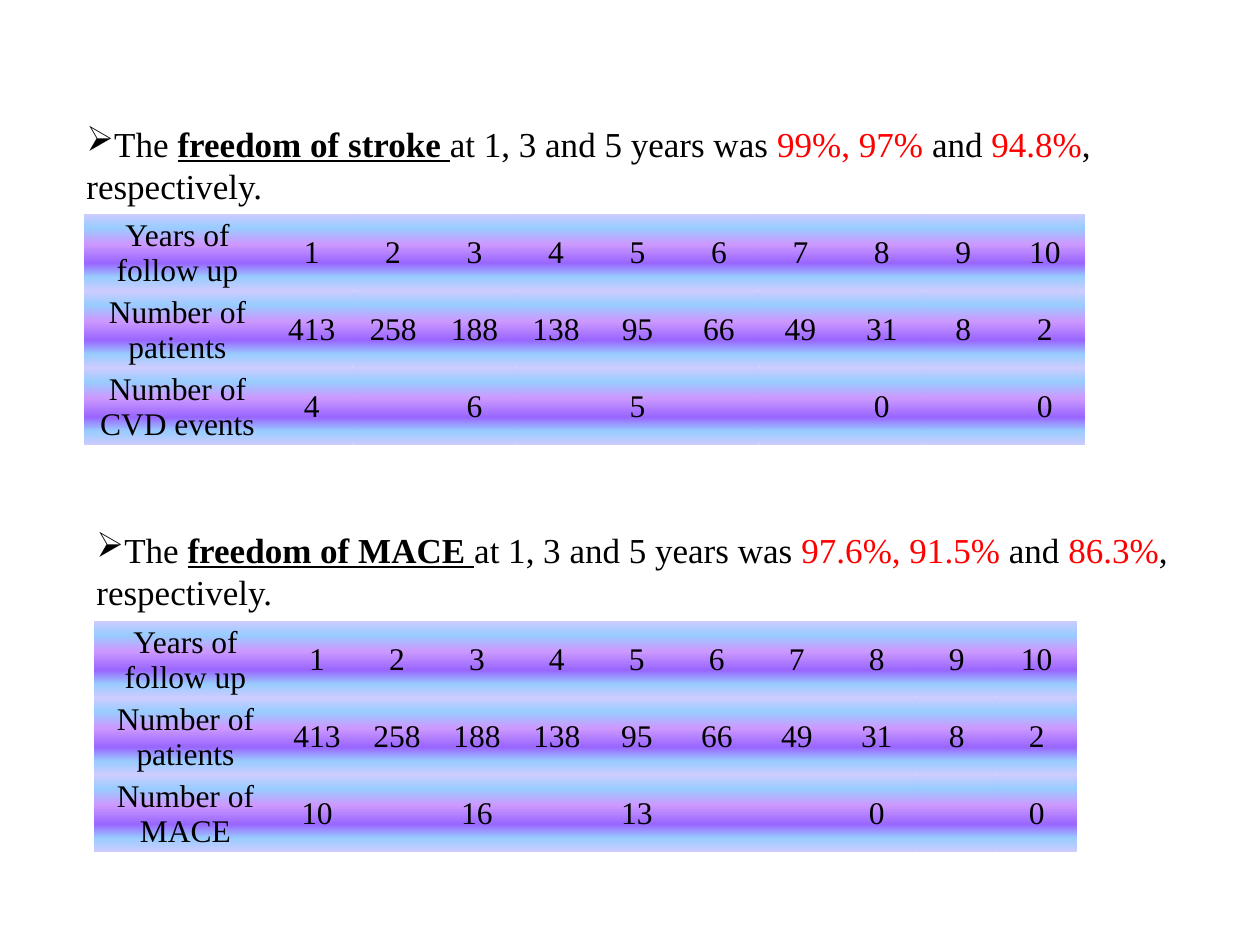
from lxml import etree
from pptx import Presentation
from pptx.dml.color import RGBColor
from pptx.enum.text import MSO_ANCHOR, MSO_AUTO_SIZE, PP_ALIGN
from pptx.oxml.ns import qn
from pptx.util import Pt

EMU_PER_PX = 914400 / 126
FONT = "Times New Roman"
BLACK = RGBColor(0x00, 0x00, 0x00)
RED = RGBColor(0xFF, 0x00, 0x00)
LAVENDER = RGBColor(0xCC, 0xCC, 0xFF)
SKY = RGBColor(0x99, 0xCC, 0xFF)
VIOLET = RGBColor(0x99, 0x66, 0xFF)
ORCHID = RGBColor(0xCC, 0x99, 0xFF)
GRADIENT = [(0, LAVENDER), (18, SKY), (36, VIOLET), (61, ORCHID), (82, SKY), (100, LAVENDER)]
CENTER = PP_ALIGN.CENTER
MIDDLE = MSO_ANCHOR.MIDDLE
GROW = MSO_AUTO_SIZE.SHAPE_TO_FIT_TEXT
NO_GRID_STYLE = "{2D5ABB26-0587-4C30-8999-92F81FD0307C}"
ROW_HEIGHT = 77

YEARS = ["Years of follow up", *range(1, 11)]
PATIENTS = ["Number of patients", 413, 258, 188, 138, 95, 66, 49, 31, 8, 2]
STROKES = ["Number of CVD events", 4, "", 6, "", 5, "", "", 0, "", 0]
MACE = ["Number of MACE", 10, "", 16, "", 13, "", "", 0, "", 0]


def px(length):
    return round(length * EMU_PER_PX)


def format_span(span, size, color=BLACK):
    span.font.name = FONT
    span.font.size = Pt(size)
    span.font.color.rgb = color


def add_bullet(para):
    properties = para._p.get_or_add_pPr()
    properties.set("marL", "0")
    properties.set("indent", "0")
    etree.SubElement(properties, qn("a:buChar")).set("char", "➢")


def add_statement(page, left, top, width, outcome, early_rates, last_rate):
    box = page.shapes.add_textbox(px(left), px(top), px(width), px(97))
    frame = box.text_frame
    frame.word_wrap = True
    frame.auto_size = GROW
    para = frame.paragraphs[0]
    add_bullet(para)
    parts = [
        ("The ", BLACK),
        (f"freedom of {outcome} ", BLACK),
        ("at 1, 3 and 5 years was ", BLACK),
        (f"{early_rates} ", RED),
        ("and ", BLACK),
        (last_rate, RED),
        (", respectively.", BLACK),
    ]
    for text, color in parts:
        span = para.add_run()
        span.text = text
        format_span(span, 20, color)
    emphasis = para.runs[1].font
    emphasis.bold = True
    emphasis.underline = True


def fill_gradient(cell):
    properties = cell._tc.get_or_add_tcPr()
    gradient = etree.SubElement(properties, qn("a:gradFill"))
    stops = etree.SubElement(gradient, qn("a:gsLst"))
    for percent, color in GRADIENT:
        stop = etree.SubElement(stops, qn("a:gs"))
        stop.set("pos", str(percent * 1000))
        etree.SubElement(stop, qn("a:srgbClr")).set("val", str(color))
    direction = etree.SubElement(gradient, qn("a:lin"))
    direction.set("ang", str(270 * 60000))
    direction.set("scaled", "1")


def fill_cell(cell, value):
    cell.vertical_anchor = MIDDLE
    cell.margin_left = cell.margin_right = cell.margin_top = px(1)
    cell.margin_bottom = 0
    fill_gradient(cell)
    para = cell.text_frame.paragraphs[0]
    para.text = str(value)
    para.alignment = CENTER
    for span in para.runs:
        format_span(span, 18)


def add_follow_up_table(page, left, top, width, label_width, rows):
    frame = page.shapes.add_table(
        len(rows), len(YEARS), px(left), px(top), px(width), px(ROW_HEIGHT * len(rows))
    )
    table = frame.table
    table.first_row = False
    table.horz_banding = False
    table._tbl.tblPr.find(qn("a:tableStyleId")).text = NO_GRID_STYLE
    year_width = (width - label_width) / (len(YEARS) - 1)
    for index, column in enumerate(table.columns):
        column.width = px(year_width if index else label_width)
    for row, values in zip(table.rows, rows):
        row.height = px(ROW_HEIGHT)
        for cell, value in zip(row.cells, values):
            fill_cell(cell, value)


def main():
    deck = Presentation()
    deck.slide_width = px(1260)
    deck.slide_height = px(945)
    page = deck.slides.add_slide(deck.slide_layouts[6])
    add_statement(page, 74, 116, 1131, "stroke", "99%, 97%", "94.8%")
    add_follow_up_table(page, 84, 214, 1002, 187, [YEARS, PATIENTS, STROKES])
    add_statement(page, 84, 522, 1142, "MACE", "97.6%, 91.5%", "86.3%")
    add_follow_up_table(page, 94, 621, 983, 183, [YEARS, PATIENTS, MACE])
    deck.save("out.pptx")


if __name__ == "__main__":
    main()
